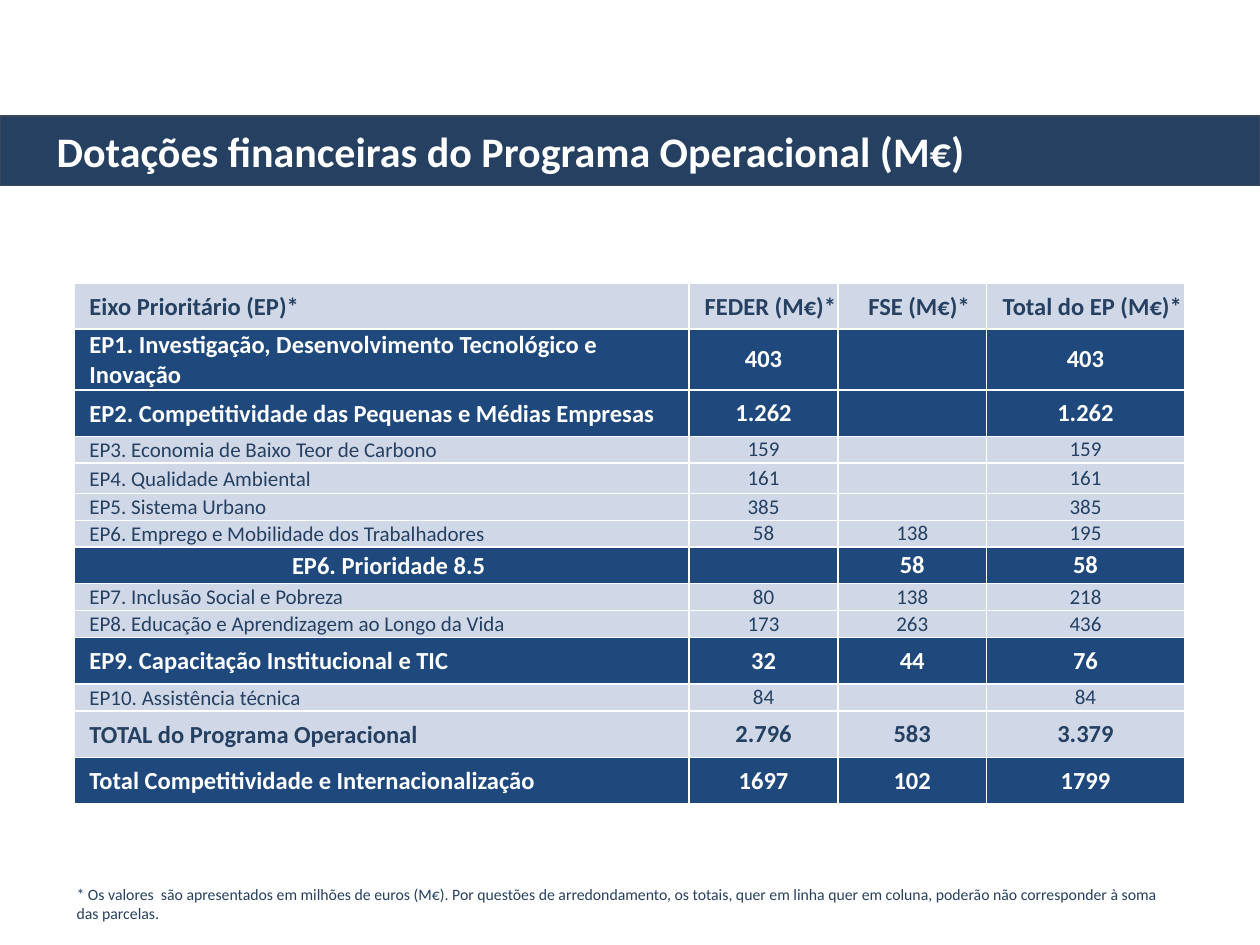
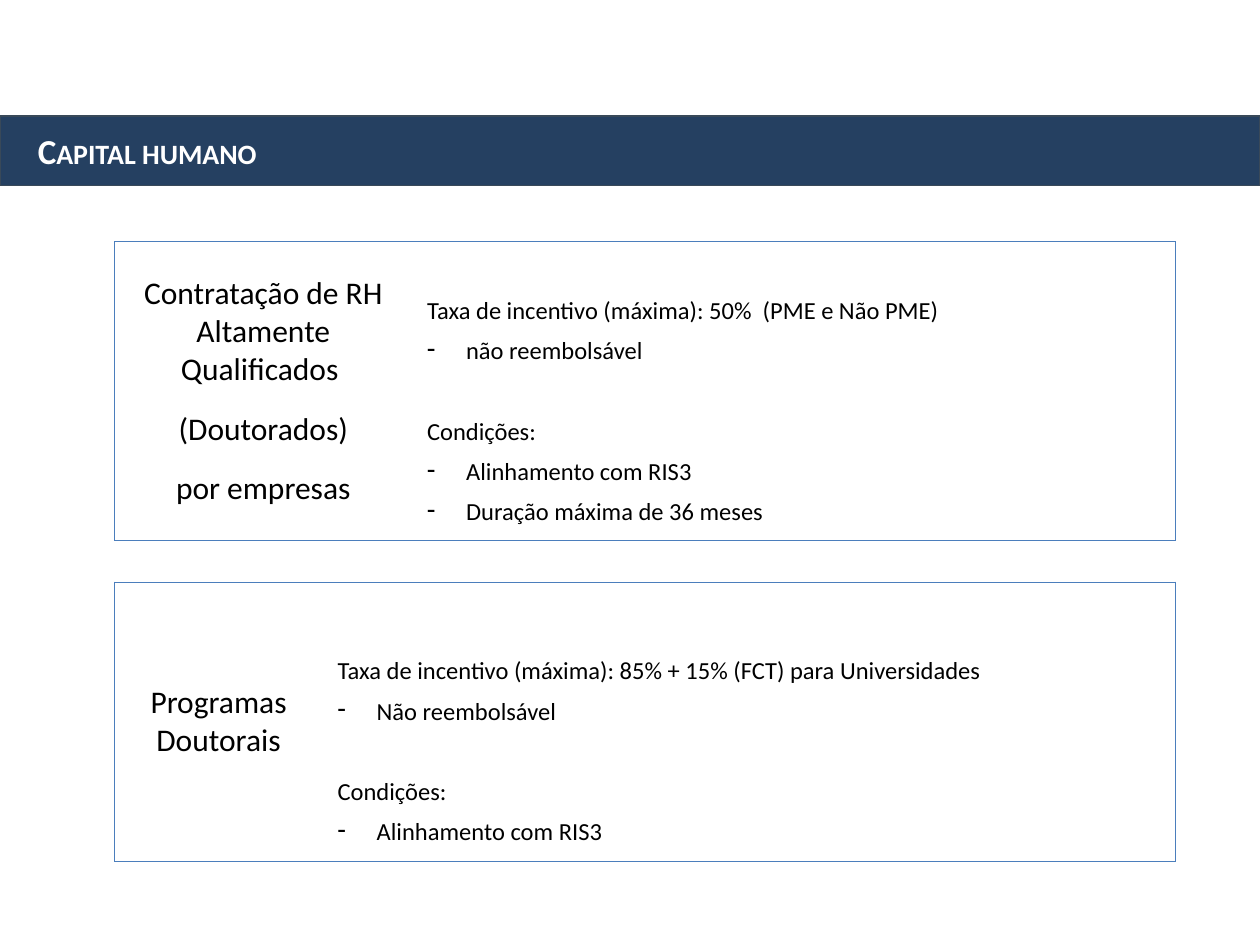
from lxml.etree import SubElement
from pptx import Presentation
from pptx.dml.color import RGBColor
from pptx.enum.shapes import MSO_SHAPE as Shape
from pptx.enum.text import MSO_ANCHOR as Anchor, PP_ALIGN as Align
from pptx.oxml import parse_xml
from pptx.oxml.ns import nsdecls, qn
from pptx.util import Inches, Pt

FONT = "Calibri"
COLORS = {
    "navy": "254061",
    "figures": "244062",
    "band_line": "394959",
    "highlight": "1F497D",
    "pale": "D0D8E8",
    "frame": "4B7EBC",
    "white": "FFFFFF",
    "black": "000000",
}

HEADINGS = ["Eixo Prioritário (EP)*", "FEDER (M€)*", "FSE (M€)*", "Total do EP (M€)*"]
# label, FEDER, FSE, total, row style, row height
ALLOCATIONS = [
    ("EP1. Investigação, Desenvolvimento Tecnológico e Inovação", "403", "", "403", "highlight", 0.48),
    ("EP2. Competitividade das Pequenas e Médias Empresas", "1.262", "", "1.262", "highlight", 0.37),
    ("EP3. Economia de Baixo Teor de Carbono", "159", "", "159", "plain", 0.21),
    ("EP4. Qualidade Ambiental", "161", "", "161", "plain", 0.24),
    ("EP5. Sistema Urbano", "385", "", "385", "plain", 0.21),
    ("EP6. Emprego e Mobilidade dos Trabalhadores", "58", "138", "195", "plain", 0.21),
    ("EP6. Prioridade 8.5", "", "58", "58", "highlight", 0.29),
    ("EP7. Inclusão Social e Pobreza", "80", "138", "218", "plain", 0.21),
    ("EP8. Educação e Aprendizagem ao Longo da Vida", "173", "263", "436", "plain", 0.21),
    ("EP9. Capacitação Institucional e TIC", "32", "44", "76", "highlight", 0.37),
    ("EP10. Assistência técnica", "84", "", "84", "plain", 0.21),
    ("TOTAL do Programa Operacional", "2.796", "583", "3.379", "total", 0.37),
    ("Total Competitividade e Internacionalização", "1697", "102", "1799", "highlight", 0.37),
]
# fill, label colour, figure colour, size, bold
ROW_STYLES = {
    "highlight": ("highlight", "white", "white", 14, True),
    "plain": ("pale", "navy", "figures", 12, False),
    "total": ("pale", "navy", "figures", 14, True),
    "heading": ("pale", "navy", "navy", 14, True),
}
FOOTNOTE = (
    "* Os valores  são apresentados em milhões de euros (M€). Por questões de arredondamento, "
    "os totais, quer em linha quer em coluna, poderão não corresponder à soma das parcelas."
)


def rgb(name):
    return RGBColor.from_string(COLORS[name])


class Deck:
    def __init__(self):
        self.presentation = Presentation()
        self.presentation.slide_width = Inches(10)
        self.presentation.slide_height = Inches(7.5)
        self.slide = None

    def new_slide(self):
        self.slide = self.presentation.slides.add_slide(self.presentation.slide_layouts[6])

    def style_text(self, paragraph, size, color, bold=False):
        for run in paragraph.runs:
            run.font.name = FONT
            run.font.size = Pt(size)
            run.font.bold = bold
            run.font.color.rgb = rgb(color)

    def title_band(self, title, size, indent, small_caps=False):
        band = self.slide.shapes.add_shape(
            Shape.RECTANGLE, 0, Inches(0.92), Inches(10), Inches(0.55))
        band.shadow.inherit = False
        band.fill.solid()
        band.fill.fore_color.rgb = rgb("navy")
        band.line.color.rgb = rgb("band_line")
        band.line.width = Pt(0.75)
        frame = band.text_frame
        frame.text = title
        frame.margin_left = Inches(indent)
        frame.vertical_anchor = Anchor.MIDDLE
        heading = frame.paragraphs[0]
        heading.alignment = Align.LEFT
        self.style_text(heading, size, "white", bold=True)
        if small_caps:
            heading.runs[0].font._element.set("cap", "small")

    def note(self, text, left, top, width, height):
        box = self.slide.shapes.add_textbox(
            Inches(left), Inches(top), Inches(width), Inches(height))
        box.text_frame.word_wrap = True
        box.text_frame.text = text
        self.style_text(box.text_frame.paragraphs[0], 9, "navy")

    def table(self, left, top, widths, heights):
        grid = self.slide.shapes.add_table(
            len(heights), len(widths), Inches(left), Inches(top),
            Inches(sum(widths)), Inches(sum(heights))).table
        grid.first_row = grid.horz_banding = False
        for column, width in zip(grid.columns, widths):
            column.width = Inches(width)
        for row, height in zip(grid.rows, heights):
            row.height = Inches(height)
        return grid

    def cell_look(self, cell, fill, sides, line, width, margins, anchor=Anchor.MIDDLE):
        """Set fill, insets (left, top, right, bottom) and lines on the sides named in LRTB."""
        cell.vertical_anchor = anchor
        (cell.margin_left, cell.margin_top,
         cell.margin_right, cell.margin_bottom) = map(Inches, margins)
        if fill:
            cell.fill.solid()
            cell.fill.fore_color.rgb = rgb(fill)
        else:
            cell.fill.background()
        properties = cell._tc.get_or_add_tcPr()
        for position, side in enumerate("LRTB"):
            paint = "<a:noFill/>"
            if side in sides:
                paint = f'<a:solidFill><a:srgbClr val="{COLORS[line]}"/></a:solidFill>'
            properties.insert(position, parse_xml(
                f'<a:ln{side} {nsdecls("a")} w="{Pt(width)}">{paint}</a:ln{side}>'))

    def empty_cell(self, cell, size):
        """Keep an empty cell from stretching its row."""
        SubElement(cell.text_frame.paragraphs[0]._p, qn("a:endParaRPr"), sz=str(size * 100))

    def allocation_row(self, cells, texts, style):
        fill, label_color, figure_color, size, bold = ROW_STYLES[style]
        for column, (cell, text) in enumerate(zip(cells, texts)):
            inset = column == 0 or style == "heading"
            margins = (0.12, 0.01, 0.01, 0) if inset else (0, 0, 0, 0)
            self.cell_look(cell, fill, "LRTB", "white", 1, margins)
            if not text:
                self.empty_cell(cell, size)
                continue
            cell.text_frame.text = text
            entry = cell.text_frame.paragraphs[0]
            centred = column > 0 or text == "EP6. Prioridade 8.5"
            entry.alignment = Align.CENTER if centred else Align.LEFT
            self.style_text(entry, size, figure_color if column else label_color, bold)

    def measure_name(self, cell, lines):
        cell.text_frame.text = "\n".join(lines)
        for index, line in enumerate(cell.text_frame.paragraphs):
            line.alignment = Align.CENTER
            line.space_before = Pt(6 if index else 0)
            line.space_after = Pt(6)
            self.style_text(line, 18, "black")

    def measure_terms(self, cell, groups):
        """Write groups of a lead line followed by dashed items."""
        cell.text_frame.text = "\n".join(line for group in groups for line in group)
        lines = iter(cell.text_frame.paragraphs)
        for number, group in enumerate(groups):
            for index, _ in enumerate(group):
                line = next(lines)
                if index:
                    properties = line._p.get_or_add_pPr()
                    properties.set("marL", str(Inches(0.31)))
                    properties.set("indent", str(-Inches(0.31)))
                    SubElement(properties, qn("a:buFontTx"))
                    SubElement(properties, qn("a:buChar"), char="-")
                    line.space_before = Pt(3)
                else:
                    line.space_before = Pt(26 if number else 0)
                line.space_after = Pt(3)
                self.style_text(line, 14, "black")

    def measure(self, top, widths, heights, name, groups, terms_top):
        """Frame a measure: its name on the left, its terms in the last row on the right."""
        grid = self.table(0.91, top, widths, heights)
        last = len(heights) - 1
        for row in range(last + 1):
            edges = ("T" if row == 0 else "") + ("B" if row == last else "")
            self.cell_look(grid.cell(row, 0), None, "L" + edges, "frame", 0.75, [0.12] * 4)
            terms_margins = (0.12, terms_top if row == last else 0, 0.12, 0)
            self.cell_look(grid.cell(row, 1), None, "R" + edges, "frame", 0.75,
                           terms_margins, Anchor.TOP)
            if row < last:
                self.empty_cell(grid.cell(row, 1), 14)
        if last:
            # the merged cell draws the whole outer edge of the left column
            grid.cell(0, 0).merge(grid.cell(last, 0))
            bottom = grid.cell(0, 0)._tc.tcPr.find(qn("a:lnB"))
            bottom.getparent().replace(bottom, parse_xml(
                f'<a:lnB {nsdecls("a")} w="{Pt(0.75)}"><a:solidFill>'
                f'<a:srgbClr val="{COLORS["frame"]}"/></a:solidFill></a:lnB>'))
        self.measure_name(grid.cell(0, 0), name)
        self.measure_terms(grid.cell(last, 1), groups)


def allocations_slide(deck):
    deck.new_slide()
    deck.title_band("Dotações financeiras do Programa Operacional (M€)", 24, 0.45)
    rows = [(*HEADINGS, "heading", 0.36), *ALLOCATIONS]
    grid = deck.table(0.59, 2.25, [4.88, 1.18, 1.18, 1.57], [row[-1] for row in rows])
    for cells, (*texts, style, _) in zip(grid.rows, rows):
        deck.allocation_row(cells.cells, texts, style)
    deck.note(FOOTNOTE, 0.51, 6.97, 8.8, 0.4)


def human_capital_slide(deck):
    deck.new_slide()
    deck.title_band("Capital humano", 20, 0.3, small_caps=True)
    deck.measure(
        1.92, [2.36, 6.06], [2.37],
        ["Contratação de RH Altamente Qualificados ", "(Doutorados)", "por empresas"],
        [["Taxa de incentivo (máxima): 50%  (PME e Não PME)", "não reembolsável"],
         ["Condições:", "Alinhamento com RIS3", "Duração máxima de 36 meses"]],
        terms_top=0.43)
    deck.measure(
        4.62, [1.65, 6.77], [0.31, 1.91],
        ["Programas Doutorais"],
        [["Taxa de incentivo (máxima): 85% + 15% (FCT) para Universidades", "Não reembolsável"],
         ["Condições:", "Alinhamento com RIS3"]],
        terms_top=0.28)


def main():
    deck = Deck()
    allocations_slide(deck)
    human_capital_slide(deck)
    deck.presentation.save("out.pptx")


if __name__ == "__main__":
    main()
